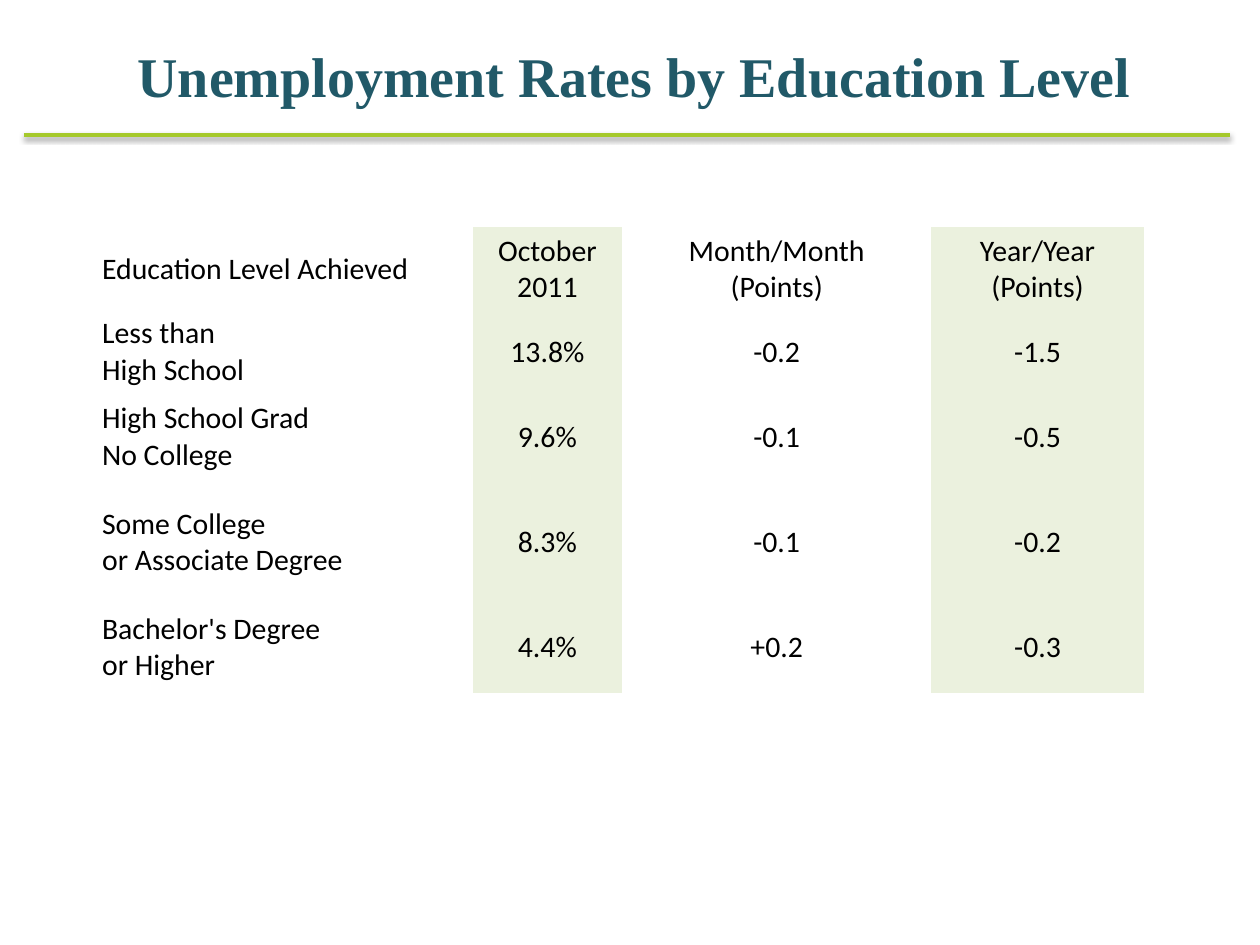
from lxml import etree
from pptx import Presentation
from pptx.dml.color import RGBColor
from pptx.enum import shapes, text
from pptx.oxml import parse_xml
from pptx.oxml.ns import nsdecls, qn
from pptx.util import Inches, Pt

PLAIN_TABLE_STYLE = "{2D5ABB26-0587-4C30-8999-92F81FD0307C}"
COLUMN_WIDTHS = [2.98, 1.19, 2.45, 1.69]
ROW_HEIGHTS = [0.67, 0.63, 0.72, 0.95, 0.72]
RATES = [
    ["Education Level Achieved", "October 2011", "Month/Month\n(Points)", "Year/Year\n(Points)"],
    ["Less than\nHigh School", "13.8%", "-0.2", "-1.5"],
    ["High School Grad\nNo College", "9.6%", "-0.1", "-0.5"],
    ["Some College\nor Associate Degree", "8.3%", "-0.1", "-0.2"],
    ["Bachelor's Degree\nor Higher", "4.4%", "+0.2", "-0.3"],
]


def color(hex_string):
    return RGBColor.from_string(hex_string)


def add_run(paragraph, words, font_name, size, hex_string, bold=False):
    run = paragraph.add_run()
    run.text = words
    run.font.name, run.font.size, run.font.bold = font_name, Pt(size), bold
    run.font.color.rgb = color(hex_string)


def place_heading(slide, left, top, width, height):
    heading = slide.shapes.title
    heading.left, heading.top = Inches(left), Inches(top)
    heading.width, heading.height = Inches(width), Inches(height)
    frame = heading.text_frame
    frame.auto_size = text.MSO_AUTO_SIZE.NONE
    frame.vertical_anchor = text.MSO_ANCHOR.MIDDLE
    paragraph = frame.paragraphs[0]
    paragraph.alignment = text.PP_ALIGN.CENTER
    add_run(paragraph, "Unemployment Rates by Education Level",
            "Times New Roman", 32, "215968", bold=True)


def place_rule(slide, left, top, width):
    rule = slide.shapes.add_connector(
        shapes.MSO_CONNECTOR.STRAIGHT,
        Inches(left), Inches(top), Inches(left + width), Inches(top))
    rule.line.color.rgb = color("A5C92B")
    rule.line.width = Pt(2)
    # Soft shadow straight below the line
    rule._element.spPr.append(parse_xml(
        f'<a:effectLst {nsdecls("a")}>'
        f'<a:outerShdw blurRad="{Pt(3.1)}" dist="{Pt(1.6)}" dir="5400000" rotWithShape="0">'
        '<a:srgbClr val="000000"><a:alpha val="38000"/></a:srgbClr>'
        '</a:outerShdw></a:effectLst>'))


def fill_cell(cell, words, row, column):
    cell.vertical_anchor = text.MSO_ANCHOR.MIDDLE
    cell.margin_left = cell.margin_right = Inches(0.04)
    cell.margin_top = cell.margin_bottom = Inches(0.05 if row == 0 else 0.02)
    # Every second column is tinted
    if column % 2:
        cell.fill.solid()
        cell.fill.fore_color.rgb = color("EBF1DE")
    else:
        cell.fill.background()
    paragraph = cell.text_frame.paragraphs[0]
    paragraph.alignment = text.PP_ALIGN.CENTER if column else text.PP_ALIGN.LEFT
    for number, line in enumerate(words.split("\n")):
        if number:
            paragraph.add_line_break()
        add_run(paragraph, line, "Calibri", 17, "000000")
    for line_break in paragraph._p.findall(qn("a:br")):
        etree.SubElement(line_break, qn("a:rPr")).set("sz", "1700")


def place_rates(slide, left, top):
    rates = slide.shapes.add_table(
        len(ROW_HEIGHTS), len(COLUMN_WIDTHS), Inches(left), Inches(top),
        Inches(sum(COLUMN_WIDTHS)), Inches(sum(ROW_HEIGHTS))).table
    rates.first_row = rates.horz_banding = False
    rates._tbl.tblPr.find(qn("a:tableStyleId")).text = PLAIN_TABLE_STYLE
    for column, width in zip(rates.columns, COLUMN_WIDTHS):
        column.width = Inches(width)
    for row, height in zip(rates.rows, ROW_HEIGHTS):
        row.height = Inches(height)
    for r, levels in enumerate(RATES):
        for c, words in enumerate(levels):
            fill_cell(rates.cell(r, c), words, r, c)


def main():
    deck = Presentation()
    deck.slide_width, deck.slide_height = Inches(10), Inches(7.5)
    slide = deck.slides.add_slide(deck.slide_layouts[5])  # Title Only
    place_rates(slide, 0.77, 1.8)
    place_rule(slide, 0.19, 1.07, 9.57)
    place_heading(slide, 0.32, 0.21, 9.43, 0.78)
    deck.save("out.pptx")


if __name__ == "__main__":
    main()
